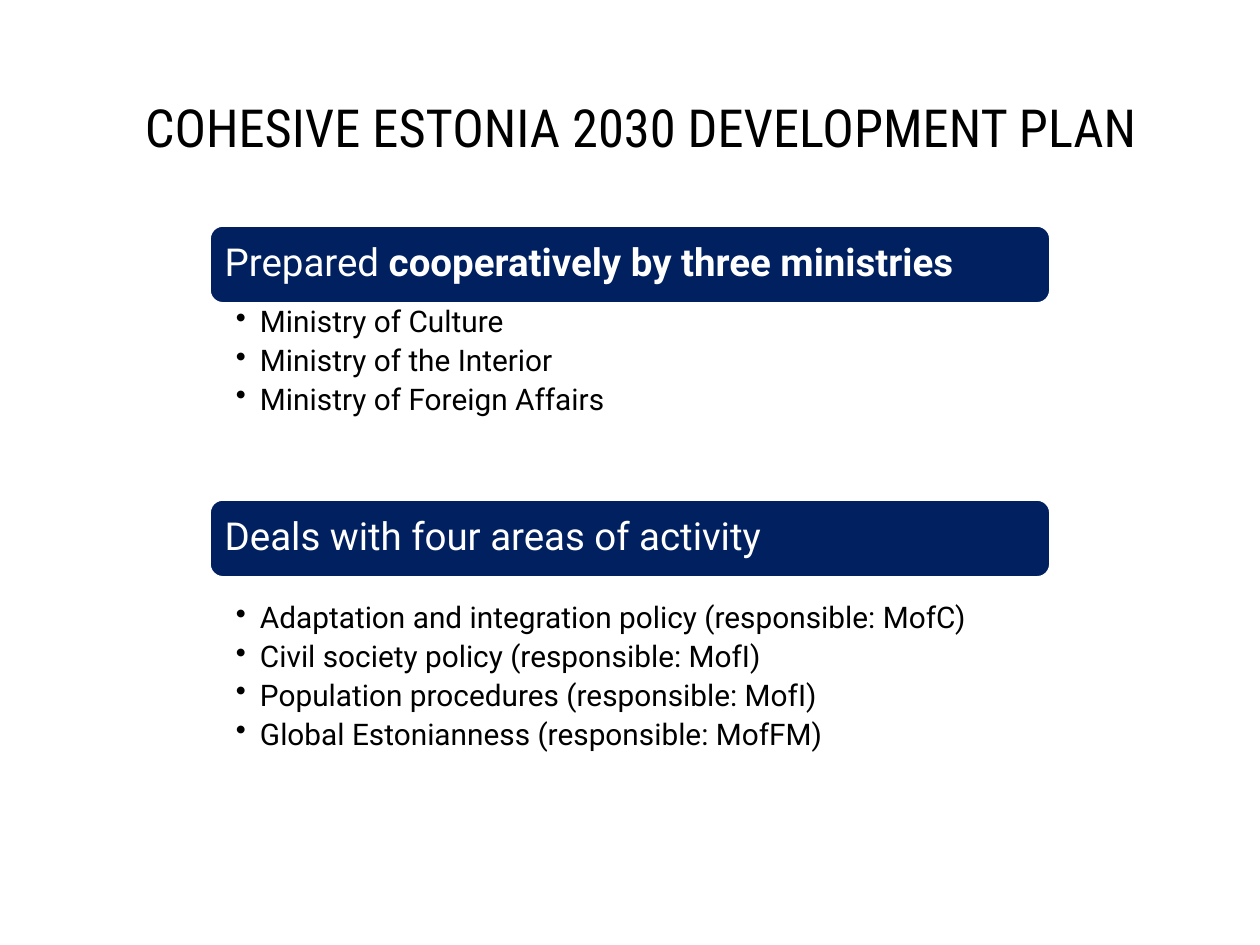
from pptx import Presentation
from pptx.dml.color import RGBColor
from pptx.enum.shapes import MSO_SHAPE
from pptx.enum.text import MSO_ANCHOR, PP_ALIGN
from pptx.oxml.xmlchemy import OxmlElement
from pptx.util import Pt

PX = 914400 // 126
NAVY = RGBColor(0x00, 0x20, 0x60)
WHITE = RGBColor(0xFF, 0xFF, 0xFF)
BLACK = RGBColor(0x00, 0x00, 0x00)


def write(para, text, size=17, font="Roboto", color=BLACK, bold=False,
          align=PP_ALIGN.LEFT, after=0):
    run = para.add_run()
    run.text = text
    run.font.size = Pt(size)
    run.font.name = font
    run.font.color.rgb = color
    run.font.bold = bold
    para.alignment = align
    para.line_spacing = 0.9
    para.space_after = Pt(after)


class Deck:
    """Builds slides in one style, with lengths in px."""

    def __init__(self, width, height):
        self.prs = Presentation()
        self.prs.slide_width = width * PX
        self.prs.slide_height = height * PX
        self.slide = self.prs.slides.add_slide(self.prs.slide_layouts[6])

    def frame(self, shape, left, top, right, bottom, anchor=MSO_ANCHOR.TOP):
        frame = shape.text_frame
        frame.word_wrap = True
        frame.vertical_anchor = anchor
        frame.margin_left = left * PX
        frame.margin_top = top * PX
        frame.margin_right = right * PX
        frame.margin_bottom = bottom * PX
        return frame

    def title(self, box, text):
        shape = self.slide.shapes.add_textbox(*(n * PX for n in box))
        frame = self.frame(shape, 13, 6, 13, 6)
        write(frame.paragraphs[0], text, size=30, font="Roboto Condensed",
              align=PP_ALIGN.CENTER)

    def bar(self, box, plain, strong=""):
        shape = self.slide.shapes.add_shape(
            MSO_SHAPE.ROUNDED_RECTANGLE, *(n * PX for n in box))
        shape.shadow.inherit = False
        shape.fill.solid()
        shape.fill.fore_color.rgb = NAVY
        shape.line.color.rgb = WHITE
        shape.line.width = Pt(1)
        frame = self.frame(shape, 11, 8, 11, 8, MSO_ANCHOR.MIDDLE)
        para = frame.paragraphs[0]
        write(para, plain, size=22, color=WHITE)
        if strong:
            write(para, strong, size=22, color=WHITE, bold=True)

    def bullets(self, box, items, top=4):
        shape = self.slide.shapes.add_textbox(*(n * PX for n in box))
        frame = self.frame(shape, 26, top, 21, 4)
        for i, item in enumerate(items):
            para = frame.add_paragraph() if i else frame.paragraphs[0]
            write(para, item, after=3.8)
            props = para._p.get_or_add_pPr()
            props.set("marL", str(24 * PX))
            props.set("indent", str(-24 * PX))
            mark = OxmlElement("a:buChar")
            mark.set("char", "•")
            props.append(mark)

    def save(self):
        self.prs.save("out.pptx")


def main():
    left, width, height = 210, 840, 77
    deck = Deck(1260, 945)
    deck.title((98, 96, 1086, 183), "COHESIVE ESTONIA 2030 DEVELOPMENT PLAN")
    deck.bar((left, 226, width, height),
             "Prepared ", "cooperatively by three ministries")
    deck.bullets((left, 303, width, 132), [
        "Ministry of Culture",
        "Ministry of the Interior",
        "Ministry of Foreign Affairs",
    ])
    deck.bar((left, 500, width, height), "Deals with four areas of activity")
    deck.bullets((left, 519, width, 257), [
        "Adaptation and integration policy (responsible: MofC)",
        "Civil society policy (responsible: MofI)",
        "Population procedures (responsible: MofI)",
        "Global Estonianness (responsible: MofFM)",
    ], top=84)
    deck.save()


if __name__ == "__main__":
    main()
